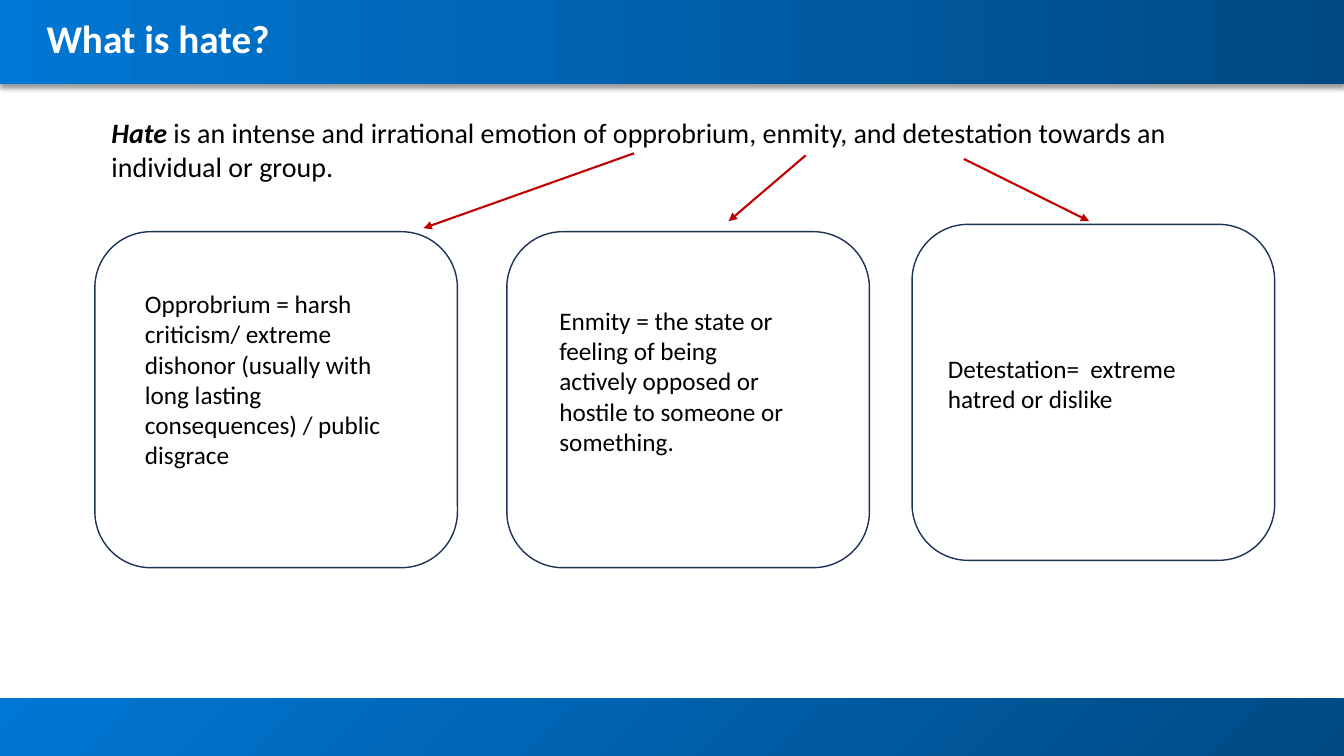
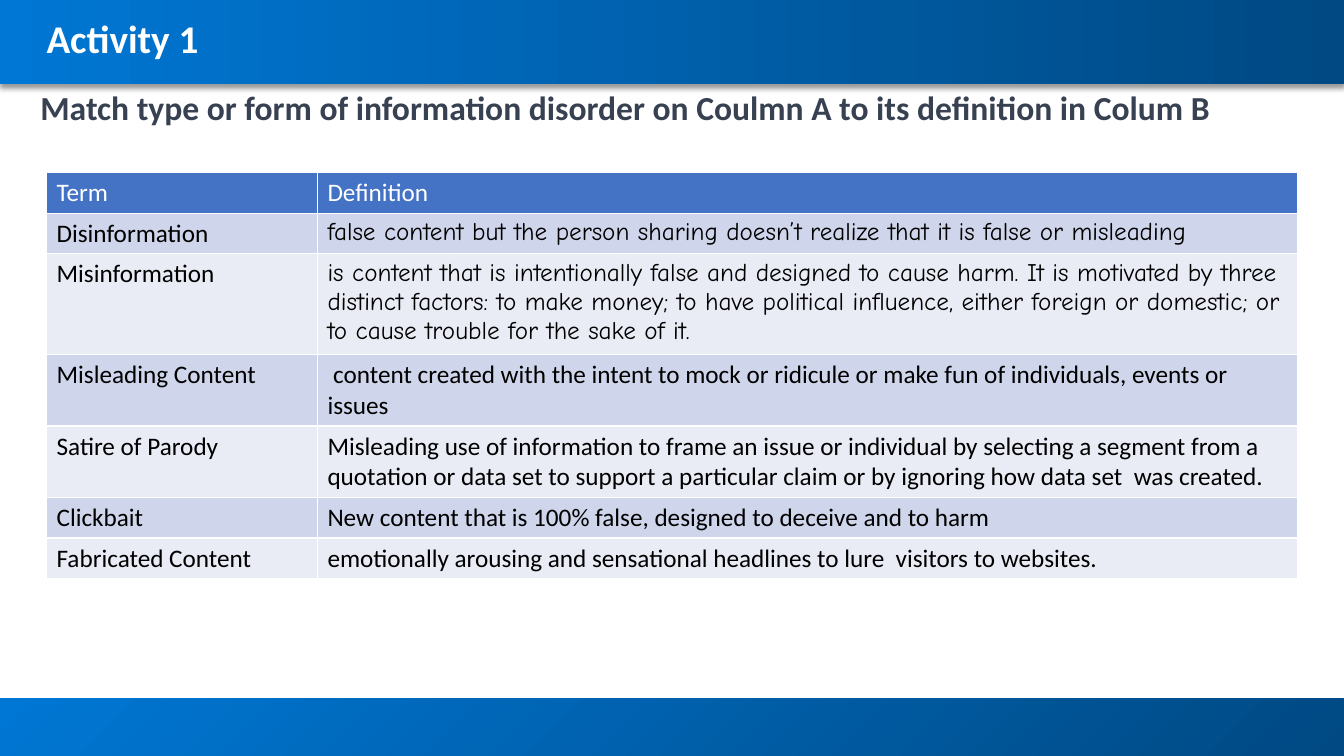
from pptx import Presentation
from pptx.dml.color import RGBColor
from pptx.enum.shapes import MSO_CONNECTOR as Connector, MSO_SHAPE as Shape
from pptx.enum.text import MSO_ANCHOR as Anchor
from pptx.oxml import parse_xml
from pptx.oxml.ns import nsdecls
from pptx.util import Pt

WHITE = RGBColor(0xFF, 0xFF, 0xFF)
BLACK = RGBColor(0x00, 0x00, 0x00)
BRIGHT_BLUE = RGBColor(0x00, 0x77, 0xD4)
DEEP_BLUE = RGBColor(0x00, 0x49, 0x83)
NAVY = RGBColor(0x1E, 0x32, 0x56)
RED = RGBColor(0xC0, 0x00, 0x00)
SLATE = RGBColor(0x37, 0x41, 0x51)
HEADER_BLUE = RGBColor(0x44, 0x72, 0xC4)
BAND_DARK = RGBColor(0xCF, 0xD5, 0xEA)
BAND_LIGHT = RGBColor(0xE9, 0xEB, 0xF5)

BODY_FONT = "Calibri"
COMIC_FONT = "Comic Neue"
WIDTH, HEIGHT = 960, 540
HEADER_HEIGHT, FOOTER_HEIGHT = 60, 41
MARGIN = 33.25
CONTENT_WIDTH = WIDTH - 2 * MARGIN
CARD_WIDTH, CARD_HEIGHT = 259, 240

CARDS = [
    (67.75, 165.5, (96.5, 202.5, 200, 138),
     "Opprobrium = harsh criticism/ extreme dishonor (usually with "
     "long lasting consequences) / public disgrace"),
    (362, 165.5, (392.5, 214.5, 183, 117),
     "Enmity = the state or feeling of being actively opposed "
     "or hostile to someone or something."),
    (651.5, 160.25, (670, 249, 222, 51),
     "Detestation=  extreme hatred or dislike"),
]
ARROWS = [
    ((453, 109.5), (302.5, 163)),
    ((575.5, 111), (520.5, 158)),
    ((688.5, 113.5), (778, 158)),
]
MATCHES = [
    ("Term", "Definition", BODY_FONT, 29),
    ("Disinformation",
     "false content but the person sharing doesn’t realize that it is false or misleading",
     COMIC_FONT, 29),
    ("Misinformation",
     "is content that is intentionally false and designed to cause harm. It is motivated "
     "by three distinct factors: to make money; to have political influence, either "
     "foreign or domestic; or to cause trouble for the sake of it.",
     COMIC_FONT, 69.5),
    ("Misleading Content",
     " content created with the intent to mock or ridicule or make fun of individuals, "
     "events or issues",
     BODY_FONT, 51),
    ("Satire of Parody",
     "Misleading use of information to frame an issue or individual by selecting a segment "
     "from a quotation or data set to support a particular claim or by ignoring how data "
     "set  was created.",
     BODY_FONT, 51),
    ("Clickbait",
     "New content that is 100% false, designed to deceive and to harm",
     BODY_FONT, 29),
    ("Fabricated Content",
     "emotionally arousing and sensational headlines to lure  visitors to websites.",
     BODY_FONT, 29),
]


class Deck:
    def __init__(self):
        self.show = Presentation()
        self.show.slide_width, self.show.slide_height = Pt(WIDTH), Pt(HEIGHT)
        self.slide = None

    def add_slide(self, title):
        self.slide = self.show.slides.add_slide(self.show.slide_layouts[6])
        self.band(HEIGHT - FOOTER_HEIGHT, FOOTER_HEIGHT, DEEP_BLUE, BRIGHT_BLUE, 135)
        header = self.band(0, HEADER_HEIGHT, BRIGHT_BLUE, DEEP_BLUE, 0)
        self.drop_shadow(header)
        heading = self.text((MARGIN, 12, CONTENT_WIDTH, 36), [title], 28, WHITE,
                            bold=True, spacing=Pt(27.8), inset=0)
        heading.vertical_anchor = Anchor.MIDDLE

    def band(self, top, height, start, end, angle):
        band = self.slide.shapes.add_shape(
            Shape.RECTANGLE, Pt(0), Pt(top), Pt(WIDTH), Pt(height))
        band.shadow.inherit = False
        band.line.fill.background()
        band.fill.gradient()
        band.fill.gradient_angle = angle
        for stop, color in zip(band.fill.gradient_stops, (start, end)):
            stop.color.rgb = color
        return band

    def drop_shadow(self, shape):
        effects = shape._element.spPr.find("{*}effectLst")
        effects.append(parse_xml(
            f'<a:outerShdw {nsdecls("a")} blurRad="{Pt(4)}" dist="{Pt(3)}" '
            'dir="5400000" algn="t" rotWithShape="0"><a:srgbClr val="000000">'
            '<a:alpha val="40000"/></a:srgbClr></a:outerShdw>'))

    def style(self, paragraph, size, color, font=BODY_FONT, bold=False):
        paragraph.font.name = font
        paragraph.font.size = Pt(size)
        paragraph.font.color.rgb = color
        paragraph.font.bold = bold

    def text(self, area, runs, size, color, bold=False, spacing=None, inset=None):
        frame = self.slide.shapes.add_textbox(*map(Pt, area)).text_frame
        frame.word_wrap = True
        if inset is not None:
            frame.margin_left = frame.margin_right = Pt(inset)
            frame.margin_top = frame.margin_bottom = Pt(inset)
        paragraph = frame.paragraphs[0]
        for words in runs:
            paragraph.add_run().text = words
        if spacing:
            paragraph.line_spacing = spacing
        self.style(paragraph, size, color, bold=bold)
        return frame

    def card(self, left, top, text_area, definition):
        card = self.slide.shapes.add_shape(
            Shape.ROUNDED_RECTANGLE, Pt(left), Pt(top), Pt(CARD_WIDTH), Pt(CARD_HEIGHT))
        card.shadow.inherit = False
        card.fill.background()
        card.line.color.rgb = NAVY
        card.line.width = Pt(1)
        self.text(text_area, [definition], 18, BLACK)

    def arrow(self, start, end):
        arrow = self.slide.shapes.add_connector(
            Connector.STRAIGHT, *map(Pt, start + end))
        arrow.line.color.rgb = RED
        arrow.line.width = Pt(1.5)
        arrow.line._get_or_add_ln().append(
            parse_xml(f'<a:tailEnd {nsdecls("a")} type="triangle"/>'))
        arrow._element.spPr.append(parse_xml(f'<a:effectLst {nsdecls("a")}/>'))

    def cell(self, cell, words, font, color, fill):
        borders = cell._tc.get_or_add_tcPr()
        for side in "LRTB":
            borders.append(parse_xml(
                f'<a:ln{side} {nsdecls("a")} w="{Pt(1)}"><a:solidFill>'
                f'<a:srgbClr val="{WHITE}"/></a:solidFill></a:ln{side}>'))
        cell.fill.solid()
        cell.fill.fore_color.rgb = fill
        cell.text = words
        self.style(cell.text_frame.paragraphs[0], 18, color, font)

    def table(self, left, top, column_widths, rows):
        table = self.slide.shapes.add_table(
            len(rows), len(column_widths), Pt(left), Pt(top),
            Pt(sum(column_widths)), Pt(sum(row[-1] for row in rows))).table
        table.horz_banding = False
        for column, width in zip(table.columns, column_widths):
            column.width = Pt(width)
        for index, (term, definition, font, height) in enumerate(rows):
            table.rows[index].height = Pt(height)
            color = BLACK if index else WHITE
            fill = (BAND_DARK if index % 2 else BAND_LIGHT) if index else HEADER_BLUE
            self.cell(table.cell(index, 0), term, BODY_FONT, color, fill)
            self.cell(table.cell(index, 1), definition, font, color, fill)


def hate_slide(deck):
    deck.add_slide("What is hate?")
    statement = deck.text(
        (72.5, 79, 843, 104),
        ["Hate", " is an intense and irrational emotion of opprobrium, enmity, "
                 "and detestation towards an individual or group."],
        20, BLACK)
    keyword = statement.paragraphs[0].runs[0].font
    keyword.bold = keyword.italic = True
    for card in CARDS:
        deck.card(*card)
    for start, end in ARROWS:
        deck.arrow(start, end)


def activity_slide(deck):
    deck.add_slide("Activity 1")
    deck.text((21.75, 62, CONTENT_WIDTH, 40),
              ["Match type or form of information disorder on Coulmn A "
               "to its definition in Colum B"],
              24, SLATE, bold=True, spacing=0.9)
    deck.table(MARGIN, 123.25, (193.5, 700), MATCHES)


def main():
    deck = Deck()
    hate_slide(deck)
    activity_slide(deck)
    deck.show.save("out.pptx")


if __name__ == "__main__":
    main()
